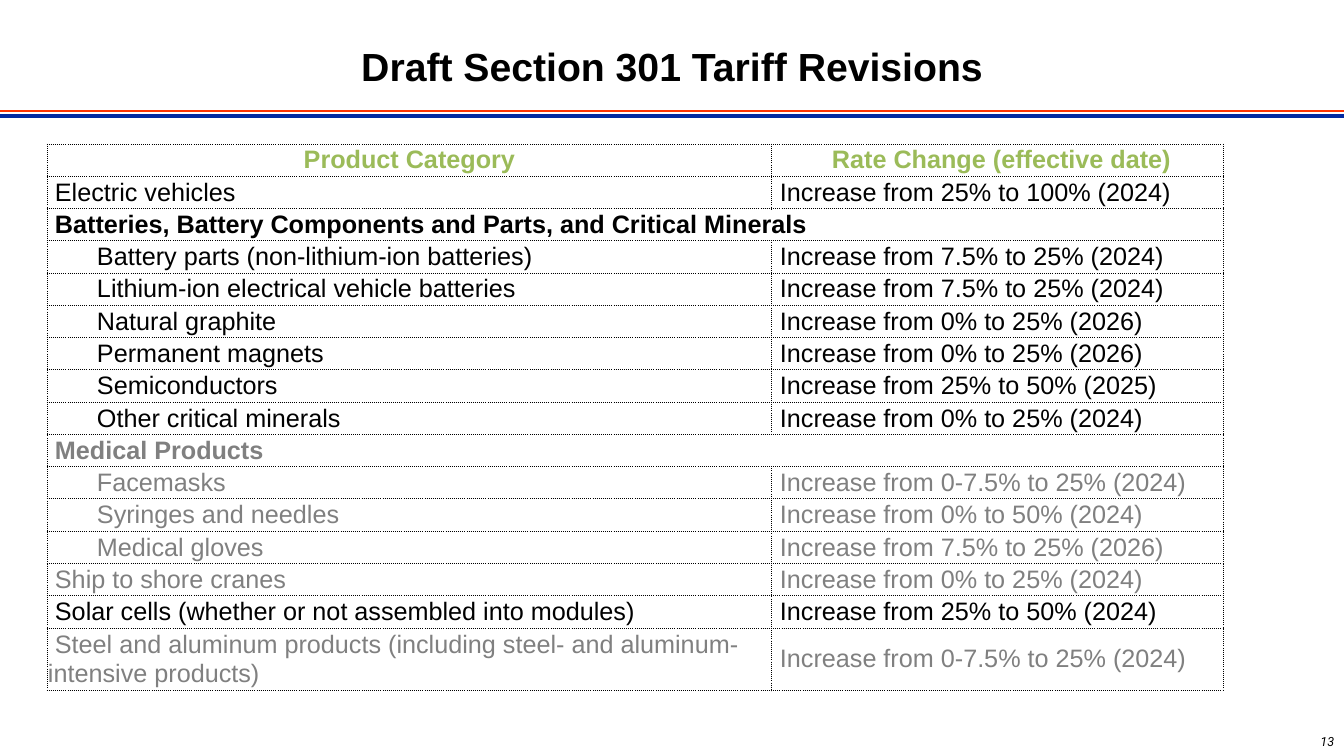
import pptx
import pptx.dml.color
import pptx.enum.shapes
import pptx.enum.text
import pptx.oxml
import pptx.oxml.ns
import pptx.util

RGB = pptx.dml.color.RGBColor
ALIGN = pptx.enum.text.PP_ALIGN
MIDDLE = pptx.enum.text.MSO_ANCHOR.MIDDLE

BLACK = RGB(0x00, 0x00, 0x00)
GREY = RGB(0x80, 0x80, 0x80)
WHITE = RGB(0xFF, 0xFF, 0xFF)
GREEN = RGB(0x9B, 0xBB, 0x59)
BLUE = RGB(0x03, 0x2A, 0xA1)
ORANGE = RGB(0xFF, 0x33, 0x00)

TITLE = "Draft Section 301 Tariff Revisions"
PAGE_NUMBER = "13"
HEADINGS = ("Product Category", "Rate Change (effective date)")

# Level, category, rate change, colour
TARIFFS = [
    ("item", "Electric vehicles", "Increase from 25% to 100% (2024)", BLACK),
    ("group", "Batteries, Battery Components and Parts, and Critical Minerals", "", BLACK),
    ("sub", "Battery parts (non-lithium-ion batteries)", "Increase from 7.5% to 25% (2024)", BLACK),
    ("sub", "Lithium-ion electrical vehicle batteries", "Increase from 7.5% to 25% (2024)", BLACK),
    ("sub", "Natural graphite", "Increase from 0% to 25% (2026)", BLACK),
    ("sub", "Permanent magnets", "Increase from 0% to 25% (2026)", BLACK),
    ("sub", "Semiconductors", "Increase from 25% to 50% (2025)", BLACK),
    ("sub", "Other critical minerals", "Increase from 0% to 25% (2024)", BLACK),
    ("group", "Medical Products", "", GREY),
    ("sub", "Facemasks", "Increase from 0-7.5% to 25% (2024)", GREY),
    ("sub", "Syringes and needles", "Increase from 0% to 50% (2024)", GREY),
    ("sub", "Medical gloves", "Increase from 7.5% to 25% (2026)", GREY),
    ("item", "Ship to shore cranes", "Increase from 0% to 25% (2024)", GREY),
    ("item", "Solar cells (whether or not assembled into modules)",
     "Increase from 25% to 50% (2024)", BLACK),
    ("item", "Steel and aluminum products (including steel- and aluminum-intensive products)",
     "Increase from 0-7.5% to 25% (2024)", GREY),
]

# Layout in px
SLIDE_W, SLIDE_H = 1344, 756
TITLE_BOX = (47, 40, 1250, 60)
NUMBER_BOX = (1210, 729, 134, 27)
RULES = [(116, BLUE, 2.25), (111, ORANGE, 2)]
TABLE_LEFT, TABLE_TOP = 47, 144
COLUMN_WIDTHS = (725, 452)
ROW_H, LAST_ROW_H = 29, 55
CELL_MARGIN = 1
INDENT, SUB_INDENT = 7, 49


def px(length):
    return pptx.util.Emu(round(length * 914400 / 100.8))


def write(frame, text, size=18, color=BLACK, bold=False, italic=False,
          font="Arial", align=ALIGN.LEFT, indent=0, spacing=None):
    paragraph = frame.paragraphs[0]
    paragraph.alignment = align
    if spacing:
        paragraph.line_spacing = spacing
    if indent:
        properties = paragraph._p.get_or_add_pPr()
        properties.set("marL", "0")
        properties.set("indent", str(px(indent)))
    run = paragraph.add_run()
    run.text = text
    run.font.size = pptx.util.Pt(size)
    run.font.name = font
    run.font.bold = bold
    run.font.italic = italic
    run.font.color.rgb = color


def style_cell(cell):
    cell.fill.solid()
    cell.fill.fore_color.rgb = WHITE
    cell.vertical_anchor = MIDDLE
    cell.margin_left = cell.margin_right = px(CELL_MARGIN)
    cell.margin_top = cell.margin_bottom = px(CELL_MARGIN)
    for place, side in enumerate("LRTB"):
        border = pptx.oxml.parse_xml(
            f'<a:ln{side} {pptx.oxml.ns.nsdecls("a")} w="{pptx.util.Pt(0.75)}">'
            f'<a:solidFill><a:srgbClr val="{BLACK}"/></a:solidFill>'
            f'<a:prstDash val="sysDot"/></a:ln{side}>')
        cell._tc.get_or_add_tcPr().insert(place, border)


def main():
    deck = pptx.Presentation()
    deck.slide_width, deck.slide_height = px(SLIDE_W), px(SLIDE_H)
    slide = deck.slides.add_slide(deck.slide_layouts[5])

    # Double rule under the title
    for y, color, width in RULES:
        rule = slide.shapes.add_connector(
            pptx.enum.shapes.MSO_CONNECTOR.STRAIGHT, 0, px(y), px(SLIDE_W), px(y))
        rule.line.color.rgb = color
        rule.line.width = pptx.util.Pt(width)
        rule._element.spPr.append(pptx.oxml.parse_xml(
            f'<a:effectLst {pptx.oxml.ns.nsdecls("a")}/>'))

    # Title
    title = slide.shapes.title
    title.left, title.top, title.width, title.height = map(px, TITLE_BOX)
    title.text_frame.vertical_anchor = MIDDLE
    title.text_frame.auto_size = pptx.enum.text.MSO_AUTO_SIZE.NONE
    write(title.text_frame, TITLE, size=28, bold=True, align=ALIGN.CENTER, spacing=0.85)

    # Page number
    number = slide.shapes.add_textbox(*map(px, NUMBER_BOX)).text_frame
    number.word_wrap = True
    write(number, PAGE_NUMBER, size=9, font="Roboto", italic=True, align=ALIGN.RIGHT)

    # Tariff table
    heights = [ROW_H] * len(TARIFFS) + [LAST_ROW_H]
    table = slide.shapes.add_table(
        len(heights), len(COLUMN_WIDTHS), px(TABLE_LEFT), px(TABLE_TOP),
        px(sum(COLUMN_WIDTHS)), px(sum(heights))).table
    table.first_row = table.horz_banding = False
    for column, width in zip(table.columns, COLUMN_WIDTHS):
        column.width = px(width)
    for row, height in zip(table.rows, heights):
        row.height = px(height)
    for cell in table.iter_cells():
        style_cell(cell)

    for column, heading in enumerate(HEADINGS):
        write(table.cell(0, column).text_frame, heading, color=GREEN, bold=True,
              align=ALIGN.CENTER, indent=column * INDENT)
    for row, (level, category, change, color) in enumerate(TARIFFS, 1):
        name, rate = table.cell(row, 0), table.cell(row, 1)
        write(name.text_frame, category, color=color, bold=level == "group",
              indent=SUB_INDENT if level == "sub" else INDENT)
        if level == "group":
            name.merge(rate)
        else:
            write(rate.text_frame, change, color=color, indent=INDENT)

    deck.save("out.pptx")


if __name__ == "__main__":
    main()
